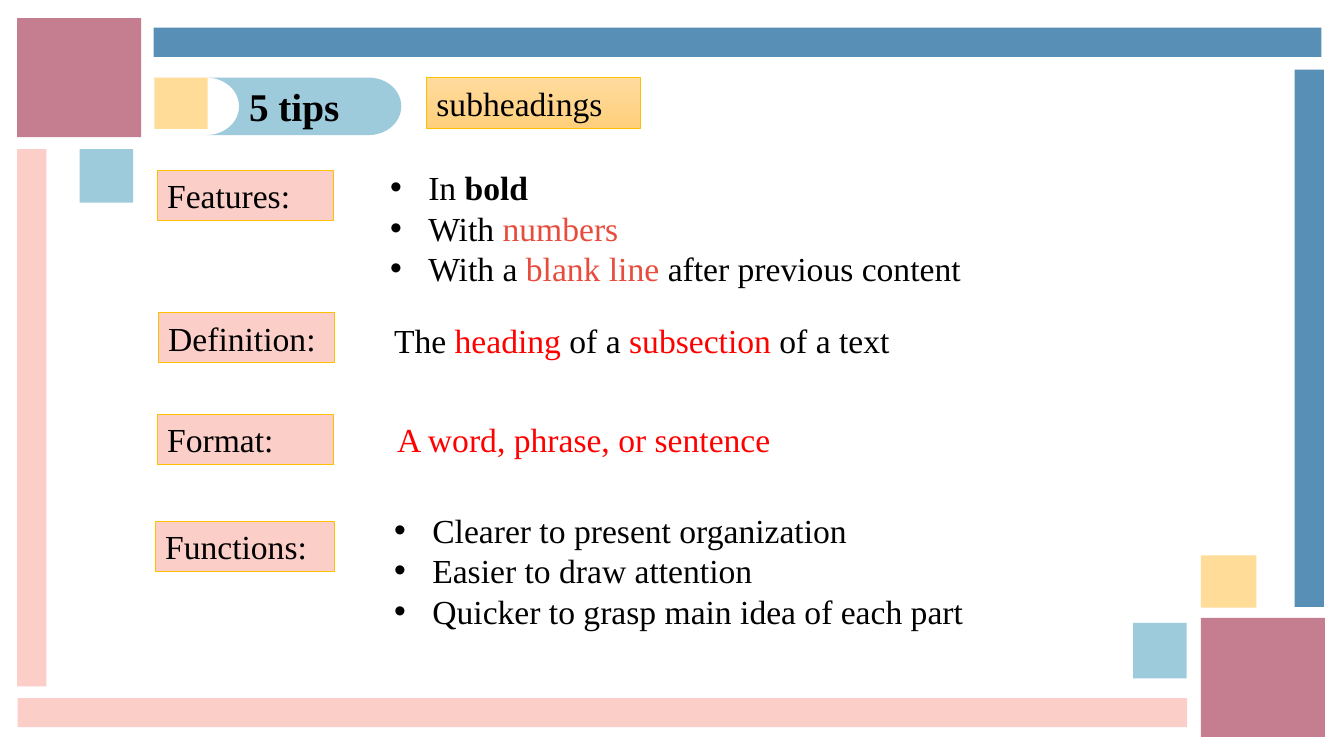
from pptx import Presentation, util as u
from pptx.dml.color import RGBColor
from pptx.enum import shapes, text
from pptx.oxml import parse_xml
from pptx.oxml.ns import nsdecls

WIDTH, HEIGHT = u.Inches(13.33), u.Inches(7.5)
COL, ROW = WIDTH / 100, HEIGHT / 100
FONT = "Times New Roman"
INDENT = u.Inches(0.38)
BAR_W, BAR_H = 2.18, 3.87
LINE_H, LIST_H = 6.67, 17.47

BLACK = RGBColor(0x00, 0x00, 0x00)
WHITE = RGBColor(0xFF, 0xFF, 0xFF)
RED = RGBColor(0xFF, 0x00, 0x00)
CORAL = RGBColor(0xE7, 0x4C, 0x3C)
MAUVE = RGBColor(0xC5, 0x7E, 0x90)
PINK = RGBColor(0xFB, 0xCE, 0xC8)
BLUE = RGBColor(0x57, 0x8F, 0xB7)
SKY = RGBColor(0x9D, 0xCB, 0xDB)
CREAM = RGBColor(0xFF, 0xDC, 0x97)
GOLD = RGBColor(0xFF, 0xC0, 0x00)
GRADIENT = RGBColor(0xFF, 0xDB, 0x9E), RGBColor(0xFF, 0xD0, 0x7C)

FRAME = [
    (1.28, 2.4, 9.23, 15.73, MAUVE),
    (89.35, 81.73, 9.23, 15.73, MAUVE),
    (1.28, 19.73, BAR_W, 71.07, PINK),
    (1.31, 92.33, 87.02, BAR_H, PINK),
    (96.33, 9.2, BAR_W, 71.07, BLUE),
    (11.44, 3.67, 86.87, BAR_H, BLUE),
    (5.93, 19.73, 3.98, 7.07, SKY),
    (89.35, 73.47, 4.13, 6.93, CREAM),
    (11.48, 10.27, 3.98, 6.8, CREAM),
    (84.32, 82.4, 3.98, 7.33, SKY),
]

LABELS = [
    ("Features:", 11.7, 22.53, 13.13),
    ("Definition:", 11.78, 41.33, 13.13),
    ("Format:", 11.7, 54.8, 13.13),
    ("Functions:", 11.55, 68.93, 13.35),
]

FEATURES = [
    [("In ", BLACK), ("bold", BLACK, True)],
    [("With ", BLACK), ("numbers", CORAL)],
    [("With a ", BLACK), ("blank line ", CORAL), ("after previous content", BLACK)],
]
DEFINITION = [[("The ", BLACK), ("heading", RED), (" of a ", BLACK),
               ("subsection", RED), (" of a text", BLACK)]]
FORMAT = [[("A word, phrase, or sentence", RED)]]
FUNCTIONS = [[(line, BLACK)] for line in (
    "Clearer to present organization",
    "Easier to draw attention",
    "Quicker to grasp main idea of each part",
)]


def place(x, y, w, h):
    """Turn grid columns and rows into whole slide units."""
    return round(x * COL), round(y * ROW), round(w * COL), round(h * ROW)


def add_block(s, x, y, w, h, fill, kind=shapes.MSO_SHAPE.RECTANGLE):
    """Add a flat shape without outline or shadow."""
    sp = s.shapes.add_shape(kind, *place(x, y, w, h))
    sp.shadow.inherit = False
    sp.fill.solid()
    sp.fill.fore_color.rgb = fill
    sp.line.fill.background()
    return sp


def add_bullet(p):
    """Give a paragraph a round bullet with a hanging indent."""
    pPr = p._p.get_or_add_pPr()
    pPr.set("marL", str(INDENT))
    pPr.set("indent", str(-INDENT))
    pPr.append(parse_xml(f'<a:buFont {nsdecls("a")} typeface="Arial"/>'))
    pPr.append(parse_xml(f'<a:buChar {nsdecls("a")} char="•"/>'))


def write(sp, lines, size=24, bullets=False):
    """Write lines of (words, colour, bold) runs into a shape."""
    tf = sp.text_frame
    tf.word_wrap = True
    tf.auto_size = text.MSO_AUTO_SIZE.SHAPE_TO_FIT_TEXT
    tf.vertical_anchor = text.MSO_ANCHOR.TOP
    for i, line in enumerate(lines):
        p = tf.add_paragraph() if i else tf.paragraphs[0]
        p.alignment = text.PP_ALIGN.LEFT
        if bullets:
            add_bullet(p)
        for words, colour, *bold in line:
            r = p.add_run()
            r.text = words
            r.font.name, r.font.size = FONT, u.Pt(size)
            r.font.color.rgb = colour
            r.font.bold = bool(bold)


def add_label(s, words, x, y, w):
    """Add a one-line box with a thin gold outline."""
    sp = add_block(s, x, y, w, LINE_H, PINK)
    sp.line.color.rgb = GOLD
    sp.line.width = u.Pt(0.5)
    write(sp, [[(words, BLACK)]])
    return sp


def add_text(s, x, y, w, h, lines, bullets=False):
    """Add a text box holding lines of runs."""
    write(s.shapes.add_textbox(*place(x, y, w, h)), lines, bullets=bullets)


def add_heading(s):
    """Add the title tab and the shaded topic box."""
    sp = add_block(s, 15.38, 10.27, 14.48, 7.6, SKY,
                   shapes.MSO_SHAPE.FLOWCHART_STORED_DATA)
    sp._element.spPr.get_or_add_xfrm().set("flipH", "1")
    write(sp, [[("5 tips", BLACK, True)]], size=28)

    topic = add_label(s, "subheadings", 31.73, 10.27, 15.9)
    topic.fill.gradient()
    topic.fill.gradient_angle = 270
    for stop, colour in zip(topic.fill.gradient_stops, GRADIENT):
        stop.color.rgb = colour


def main():
    """Build the slide and save it."""
    prs = Presentation()
    prs.slide_width, prs.slide_height = WIDTH, HEIGHT
    s = prs.slides.add_slide(prs.slide_layouts[6])
    for block in FRAME:
        add_block(s, *block)
    add_heading(s)
    for label in LABELS:
        add_label(s, *label)
    write(add_block(s, 28.28, 21.47, 64.59, LIST_H, WHITE), FEATURES, bullets=True)
    add_text(s, 28.58, 41.6, 65.12, LINE_H, DEFINITION)
    add_text(s, 28.81, 54.8, 41.04, LINE_H, FORMAT)
    add_text(s, 28.58, 66.8, 65.12, LIST_H, FUNCTIONS, bullets=True)
    prs.save("out.pptx")


if __name__ == "__main__":
    main()
